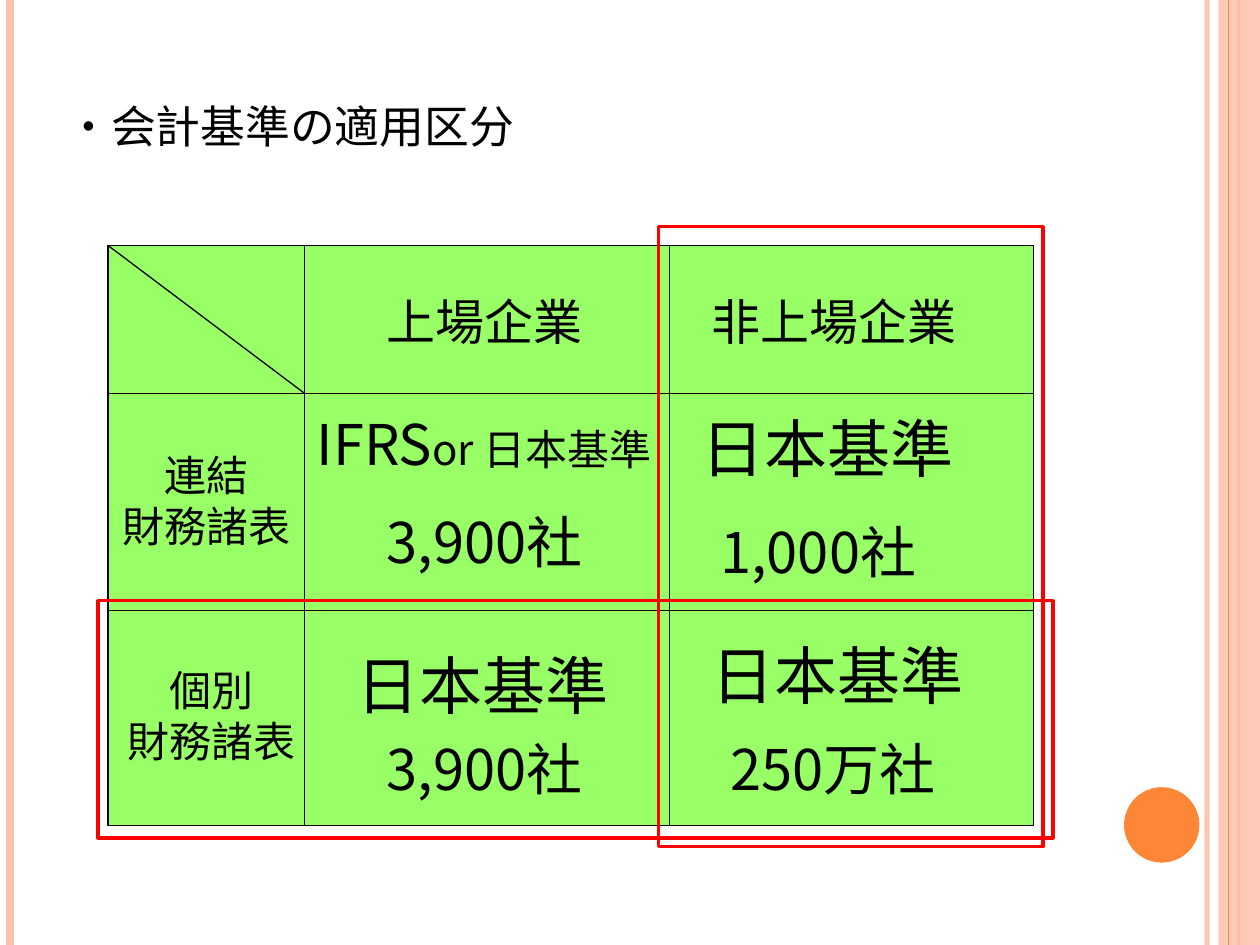
from lxml import etree
from pptx import Presentation, util as u
from pptx.dml import color
from pptx.enum import shapes, text
from pptx.oxml import ns

FONT = "Noto Sans CJK JP"
COLORS = {"ink": "000000", "cell": "99FF66", "mark": "FF0000",
          "peach": "FEC3AE", "orange": "FE8637"}
SLIDE_W, SLIDE_H = 25.4, 19.05
LINE_HEIGHTS = {28: 1.45, 32: 1.63, 36: 1.8}


def rgb(name):
    return color.RGBColor.from_string(COLORS[name])


def set_alpha(sp, percent):
    for clr in sp._element.spPr.iter(ns.qn("a:srgbClr")):
        etree.SubElement(clr, ns.qn("a:alpha"), val=str(percent * 1000))


def add_line(s, x1, y1, x2, y2, name="ink", width=0.75):
    line = s.shapes.add_connector(shapes.MSO_CONNECTOR.STRAIGHT,
                                  *map(u.Cm, (x1, y1, x2, y2)))
    line.line.color.rgb = rgb(name)
    line.line.width = u.Pt(width)
    etree.SubElement(line._element.spPr, ns.qn("a:effectLst"))
    return line


def add_box(s, x, y, w, h, fill=None, outline=None, width=0.75,
            kind=shapes.MSO_SHAPE.RECTANGLE):
    sp = s.shapes.add_shape(kind, *map(u.Cm, (x, y, w, h)))
    sp.shadow.inherit = False
    if fill:
        sp.fill.solid()
        sp.fill.fore_color.rgb = rgb(fill)
    else:
        sp.fill.background()
    if outline:
        sp.line.color.rgb = rgb(outline)
        sp.line.width = u.Pt(width)
    else:
        sp.line.fill.background()
    return sp


def add_text(s, x, y, w, h, lines, size, align=text.PP_ALIGN.LEFT,
             anchor=text.MSO_ANCHOR.TOP, small_caps=False):
    """Add paragraphs; each is a list of strings or (string, size) runs."""
    tf = s.shapes.add_textbox(*map(u.Cm, (x, y, w, h))).text_frame
    tf.word_wrap = True
    tf.vertical_anchor = anchor
    for i, runs in enumerate(lines):
        p = tf.paragraphs[0] if i == 0 else tf.add_paragraph()
        p.alignment = align
        for run in runs:
            words, points = (run, size) if isinstance(run, str) else run
            r = p.add_run()
            r.text = words
            r.font.size = u.Pt(points)
            r.font.name = FONT
            r.font.color.rgb = rgb("ink")
            props = r._r.get_or_add_rPr()
            etree.SubElement(props, ns.qn("a:ea"), typeface=FONT)
            if small_caps:
                props.set("cap", "small")


def add_side_decoration(s, w, h):
    set_alpha(add_line(s, w - 1.07, 0, w - 1.07, h, "peach", 3), 93)
    add_line(s, 0.2, 0, 0.2, h, "peach", 4.5)
    add_line(s, w - 0.43, 0, w - 0.43, h, "orange", 1.5)
    set_alpha(add_box(s, w - 0.84, 0, 0.84, h, "peach"), 87)
    add_line(s, w - 0.64, 0, w - 0.64, h, "orange")
    add_box(s, w - 2.74, h - 3.18, 1.52, 1.52, "orange",
            kind=shapes.MSO_SHAPE.OVAL)


def add_title(s, x, y, w, h):
    add_text(s, x, y, w, h, [["・会計基準の適用区分"]], 32,
             anchor=text.MSO_ANCHOR.BOTTOM, small_caps=True)


def add_standards_grid(s, x, y, w, h):
    columns, rows = (3.96, 11.31), (2.98, 7.35)
    add_box(s, x, y, w, h, "cell", "ink")
    for row in rows:
        add_line(s, x, y + row, x + w, y + row)
    for column in columns:
        add_line(s, x + column, y, x + column, y + h)
    add_line(s, x, y, x + columns[0], y + rows[0])

    for dx, dy, width, name in ((-0.2, 3.99, 4.37, "連結"),
                                (0, 8.33, 4.17, "個別")):
        add_text(s, x + dx, y + dy, width, 2.31, [[name], ["財務諸表"]], 24,
                 align=text.PP_ALIGN.CENTER)

    entries = [
        (5.36, 0.81, 4.57, 28, ["上場企業"]),
        (11.91, 0.81, 6.35, 28, ["非上場企業"]),
        (3.96, 3.18, 8.43, 32, ["IFRS", ("or 日本基準", 24)]),
        (11.71, 3.18, 6.35, 36, ["日本基準"]),
        (11.91, 7.75, 6.35, 36, ["日本基準"]),
        (5.36, 5.16, 5.16, 32, ["3,900社"]),
        (5.36, 9.73, 5.36, 32, ["3,900社"]),
        (12.09, 5.36, 6.15, 32, ["1,000社"]),
        (12.29, 9.73, 5.77, 32, ["250万社"]),
        (4.75, 7.95, 5.94, 36, ["日本基準"]),
    ]
    for dx, dy, width, size, runs in entries:
        add_text(s, x + dx, y + dy, width, LINE_HEIGHTS[size], [runs], size)

    for dx, dy, width, height in ((11.1, -0.38, 7.75, 12.5),
                                  (-0.2, 7.16, 19.25, 4.78)):
        add_box(s, x + dx, y + dy, width, height, outline="mark", width=2)


def main():
    prs = Presentation()
    prs.slide_width, prs.slide_height = u.Cm(SLIDE_W), u.Cm(SLIDE_H)
    s = prs.slides.add_slide(prs.slide_layouts[6])
    add_side_decoration(s, SLIDE_W, SLIDE_H)
    add_title(s, 1.09, 0, 22.86, 3.25)
    add_standards_grid(s, 2.18, 4.95, 18.65, 11.7)
    prs.save("out.pptx")


if __name__ == "__main__":
    main()
